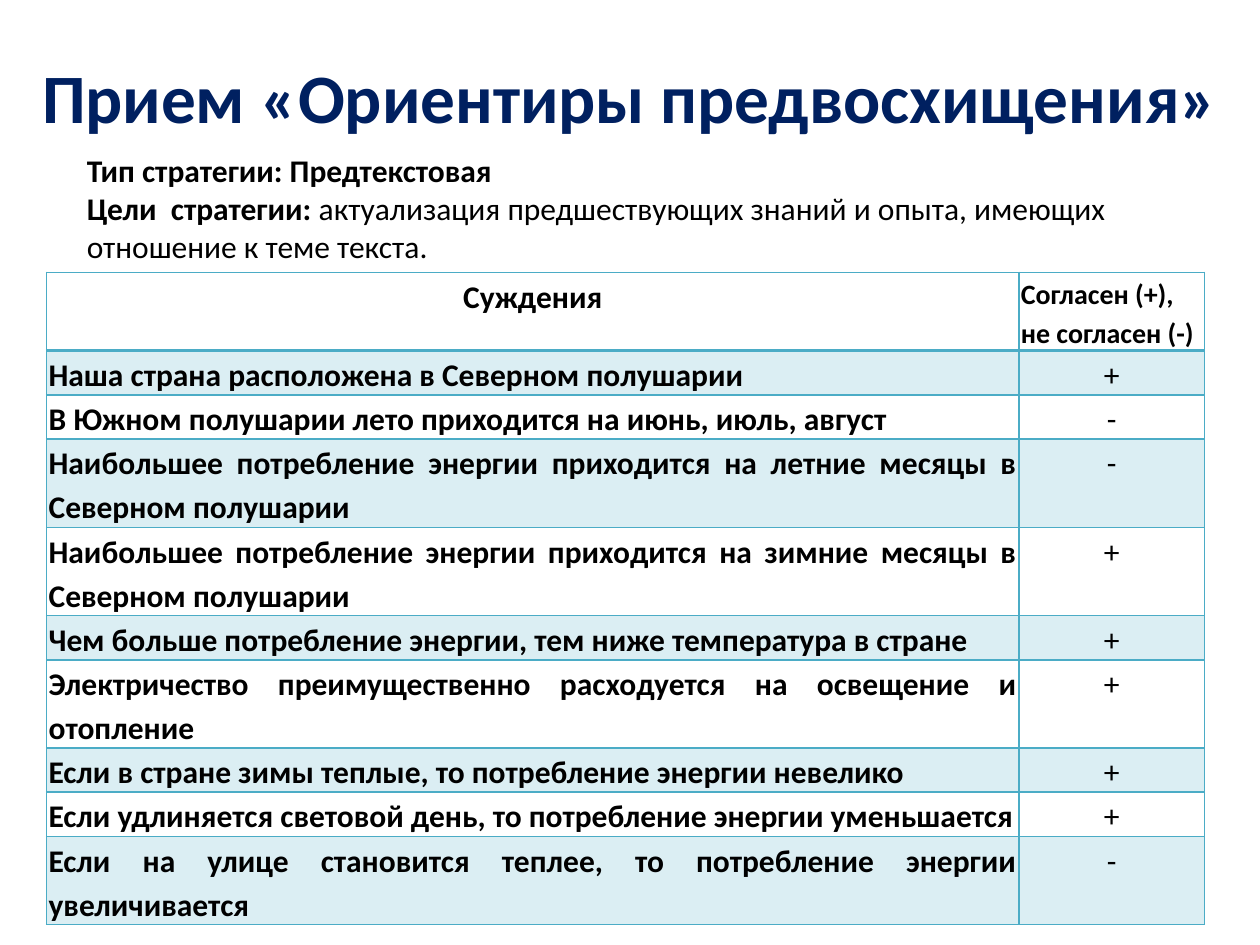
from lxml import etree
from pptx import Presentation
from pptx.dml.color import RGBColor
from pptx.enum.text import MSO_ANCHOR, PP_ALIGN
from pptx.oxml.ns import qn
from pptx.util import Cm, Pt

LEFT, CENTER, JUST = PP_ALIGN.LEFT, PP_ALIGN.CENTER, PP_ALIGN.JUSTIFY
MIDDLE = MSO_ANCHOR.MIDDLE
TEAL, NAVY, BLACK = "4BACC6", "002060", "000000"
LINE, HEAD = 0.89, 1.58
WIDE, SLIM = 19.6, 3.74
ROWS = [
    ("Наша страна расположена в Северном полушарии", "+", 1),
    ("В Южном полушарии лето приходится на июнь, июль, август", "-", 1),
    ("Наибольшее потребление энергии приходится на летние месяцы в Северном полушарии", "-", 2),
    ("Наибольшее потребление энергии приходится на зимние месяцы в Северном полушарии", "+", 2),
    ("Чем больше потребление энергии, тем ниже температура в стране", "+", 1),
    ("Электричество преимущественно расходуется на освещение и отопление", "+", 2),
    ("Если в стране зимы теплые, то потребление энергии невелико", "+", 1),
    ("Если удлиняется световой день, то потребление энергии уменьшается", "+", 1),
    ("Если на улице становится теплее, то потребление энергии увеличивается", "-", 2),
]


def color(code):
    """Turn a hex string into a colour."""
    return RGBColor.from_string(code)


def style(run, size, bold=True, code=BLACK):
    """Set the font of a run."""
    font = run.font
    font.name, font.size, font.bold = "Calibri", Pt(size), bold
    font.color.rgb = color(code)


def add_box(slide, left, top, width, height):
    """Add a wrapping text box and return its frame."""
    box = slide.shapes.add_textbox(Cm(left), Cm(top), Cm(width), Cm(height))
    box.text_frame.word_wrap = True
    return box.text_frame


def add_title(slide):
    """Add the slide heading."""
    frame = add_box(slide, 0.3, 0.76, 24.8, 2.36)
    frame.text = "Прием «Ориентиры предвосхищения»"
    frame.vertical_anchor = MIDDLE
    para = frame.paragraphs[0]
    para.alignment = CENTER
    style(para.runs[0], 39.6, code=NAVY)


def add_intro(slide):
    """Add the type and the aims of the strategy."""
    para = add_box(slide, 1.5, 2.92, 22.2, 2.57).paragraphs[0]
    para.text = "Тип стратегии: Предтекстовая\vЦели  стратегии:"
    for run in para.runs:
        style(run, 18)
    aims = para.add_run()
    aims.text = " актуализация предшествующих знаний и опыта, имеющих отношение к теме текста."
    style(aims, 18, False)


def add_edges(cell, bottom):
    """Draw the four borders of a cell."""
    props = cell._tc.get_or_add_tcPr()
    for side, width in (("L", 1), ("R", 1), ("T", 1), ("B", bottom)):
        edge = etree.SubElement(props, qn("a:ln" + side), w=str(Pt(width)))
        fill = etree.SubElement(edge, qn("a:solidFill"))
        etree.SubElement(fill, qn("a:srgbClr"), val=TEAL)


def add_tint(cell):
    """Fill a cell with faint teal."""
    cell.fill.solid()
    cell.fill.fore_color.rgb = color(TEAL)
    tone = cell._tc.tcPr.find(qn("a:solidFill")).find(qn("a:srgbClr"))
    etree.SubElement(tone, qn("a:alpha"), val="20000")


def set_cell(cell, text, align, size=18, bold=True, tint=False, bottom=1):
    """Write and format one table cell."""
    cell.margin_left = cell.margin_right = Cm(0.04)
    cell.margin_top = cell.margin_bottom = 0
    cell.text_frame.text = text
    para = cell.text_frame.paragraphs[0]
    para.alignment, para.line_spacing = align, 1.15
    style(para.runs[0], size, bold)
    add_edges(cell, bottom)
    if tint:
        add_tint(cell)
    else:
        cell.fill.background()


def add_grid(slide):
    """Add the table of statements and answers."""
    high = HEAD + LINE * sum(row[2] for row in ROWS)
    shape = slide.shapes.add_table(
        len(ROWS) + 1, 2, Cm(0.94), Cm(5.49), Cm(WIDE + SLIM), Cm(high))
    table = shape.table
    table.first_row = table.horz_banding = False
    table.columns[0].width, table.columns[1].width = Cm(WIDE), Cm(SLIM)
    table.rows[0].height = Cm(HEAD)
    set_cell(table.cell(0, 0), "Суждения", CENTER, bottom=2)
    set_cell(table.cell(0, 1), "Согласен (+), не согласен (-)", LEFT, 16, bottom=2)
    for num, (claim, mark, lines) in enumerate(ROWS, 1):
        table.rows[num].height = Cm(LINE * lines)
        tint = num % 2 == 1
        set_cell(table.cell(num, 0), claim, JUST, tint=tint)
        set_cell(table.cell(num, 1), mark, CENTER, bold=False, tint=tint)


def main():
    """Build and save the slide."""
    deck = Presentation()
    deck.slide_width, deck.slide_height = Cm(25.4), Cm(19.05)
    slide = deck.slides.add_slide(deck.slide_layouts[6])
    add_title(slide)
    add_grid(slide)
    add_intro(slide)
    deck.save("out.pptx")


if __name__ == "__main__":
    main()
